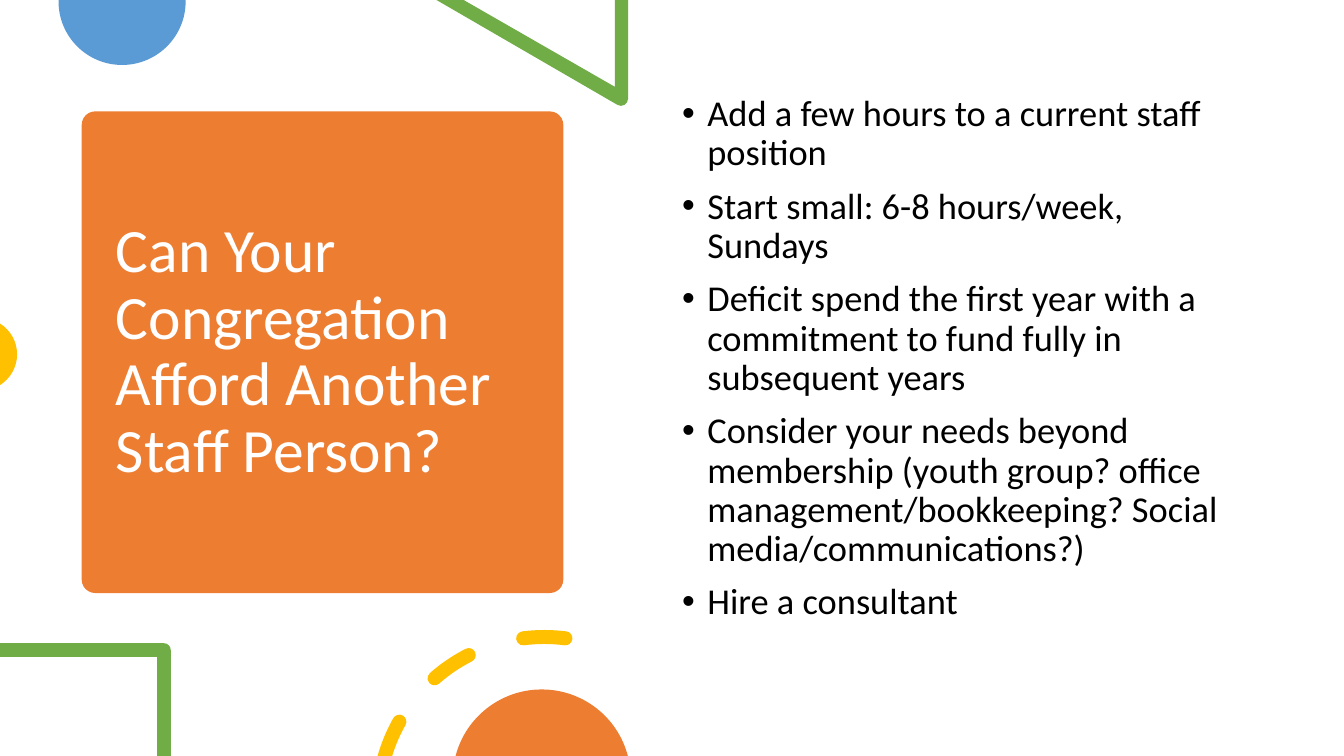
from math import ceil, cos, radians, sin, tan

from lxml.etree import SubElement
from pptx import Presentation
from pptx.dml.color import RGBColor
from pptx.enum.shapes import MSO_SHAPE as Kind
from pptx.enum.text import MSO_ANCHOR as Anchor
from pptx.oxml.ns import qn
from pptx.util import Pt

ORANGE, BLUE, GREEN, GOLD = "ED7D31", "5B9BD5", "70AD47", "FFC000"
WHITE, BLACK = "FFFFFF", "000000"
WIDTH, HEIGHT = 960, 540

TITLE = "Can Your Congregation Afford Another Staff Person?"
IDEAS = [
    "Add a few hours to a current staff position",
    "Start small: 6-8 hours/week, Sundays",
    "Deficit spend the first year with a commitment to fund fully in subsequent years",
    "Consider your needs beyond membership (youth group? office "
    "management/bookkeeping? Social media/communications?)",
    "Hire a consultant",
]


def paint(hue):
    return RGBColor.from_string(hue)


def spot(x, y, r, turn):
    """Point on a circle; degrees run clockwise from the right."""
    return x + r * cos(radians(turn)), y + r * sin(radians(turn))


def corners(*points):
    return [(point,) for point in points]


def arc(x, y, r, start, end):
    """Start point, then one cubic curve (two handles, end) per quarter turn or less."""
    count = ceil(abs(end - start) / 90)
    step = (end - start) / count
    pull = 4 / 3 * tan(radians(step / 4)) * r
    parts = corners(spot(x, y, r, start))
    for i in range(count):
        a, b = start + i * step, start + (i + 1) * step
        first, last = spot(x, y, r, a), spot(x, y, r, b)
        parts.append((spot(*first, pull, a + 90), spot(*last, -pull, b + 90), last))
    return parts


class Page:
    font = "Calibri"

    def __init__(self, deck):
        self.slide = deck.slides.add_slide(deck.slide_layouts[6])
        self.shapes = self.slide.shapes

    def fill(self, shape, hue):
        shape.shadow.inherit = False
        shape.fill.solid()
        shape.fill.fore_color.rgb = paint(hue)
        shape.line.fill.background()

    def card(self, box, hue, bend):
        shape = self.shapes.add_shape(Kind.ROUNDED_RECTANGLE, *map(Pt, box))
        shape.adjustments[0] = bend
        self.fill(shape, hue)

    def outline(self, hue, *loops):
        """Draw closed loops of corners and curves as one filled shape."""
        pen = None
        for loop in loops:
            points = [(Pt(x), Pt(y)) for part in loop for x, y in part]
            if pen:
                pen.move_to(*points[0])
            else:
                pen = self.shapes.build_freeform(*points[0])
            pen.add_line_segments(points[1:], close=True)
        shape = pen.convert_to_shape()
        self.bend(shape, loops)
        self.fill(shape, hue)

    def bend(self, shape, loops):
        """Merge the three line nodes of each curve into one cubic node."""
        track = next(shape._element.iter(qn("a:path")))
        nodes = iter(list(track))
        for loop in loops:
            for part in loop:
                first, *rest = [next(nodes) for _ in part]
                if rest:
                    first.tag = qn("a:cubicBezTo")
                for node in rest:
                    first.extend(list(node))
                    track.remove(node)
            next(nodes)

    def text(self, box, lines, size, hue, anchor=Anchor.TOP, bullet=None, before=0):
        frame = self.shapes.add_textbox(*map(Pt, box)).text_frame
        frame.word_wrap = True
        frame.vertical_anchor = anchor
        for i, line in enumerate(lines):
            para = frame.add_paragraph() if i else frame.paragraphs[0]
            para.line_spacing = 0.9
            para.space_before = Pt(before)
            if bullet:
                self.bullet(para, bullet)
            run = para.add_run()
            run.text = line
            run.font.name = self.font
            run.font.size = Pt(size)
            run.font.color.rgb = paint(hue)

    def bullet(self, para, mark, indent=18):
        props = para._p.get_or_add_pPr()
        props.set("marL", str(Pt(indent)))
        props.set("indent", str(-Pt(indent)))
        SubElement(props, qn("a:buFont"), typeface="Arial")
        SubElement(props, qn("a:buChar"), char=mark)


def dash(x, y, r, half, start, end):
    """Outline of a round-ended stroke along a circle."""
    head, tail = spot(x, y, r, end), spot(x, y, r, start)
    return (arc(x, y, r + half, start, end)
            + arc(*head, half, end, end + 180)[1:]
            + arc(x, y, r - half, end, start)[1:]
            + arc(*tail, half, start + 180, start + 360)[1:])


def cut(x, y, r, half, outer, inner, end):
    """Outline of a stroke with one round end and one cut by the slide's edge."""
    return (arc(x, y, r + half, outer, end)
            + arc(*spot(x, y, r, end), half, end, end + 180)[1:]
            + arc(x, y, r - half, end, inner)[1:])


def main():
    deck = Presentation()
    deck.slide_width, deck.slide_height = Pt(WIDTH), Pt(HEIGHT)
    page = Page(deck)

    page.card((58.4, 79.6, 344, 344), ORANGE, 0.028)
    page.text((75.6, 87.8, 310.3, 328.3), [TITLE], 44, WHITE, Anchor.MIDDLE)

    page.outline(BLUE, corners((132.6, 0), (41.8, 0)) + arc(87.2, 1, 45.4, 180, 0))
    page.outline(GREEN, corners((448.6, 0), (439.2, 0), (439.2, 62), (331.2, 0),
                                (311.8, 0)) + arc(443.6, 70.6, 5, 120, 0))
    page.outline(GOLD, arc(-13.7, 253.1, 25.9, -58, 58))

    page.text((480.2, 64.5, 414, 385.2), IDEAS, 26, BLACK, bullet="•", before=10)

    page.outline(GREEN, corners((0, 459.4), (0, 469.2), (112.3, 469.2),
                                (112.3, HEIGHT), (122, HEIGHT))
                 + arc(117, 464.4, 5, 0, -90))
    ring = (388.8, 573.8, 118.8, 5)
    page.outline(GOLD, cut(*ring, 195.9, 197.3, 209.4),
                 dash(*ring, 228.7, 243), dash(*ring, 262.7, 277.3))
    page.outline(ORANGE, arc(387, 556.1, 63.6, 194.7, 345.3))

    deck.save("out.pptx")


if __name__ == "__main__":
    main()
